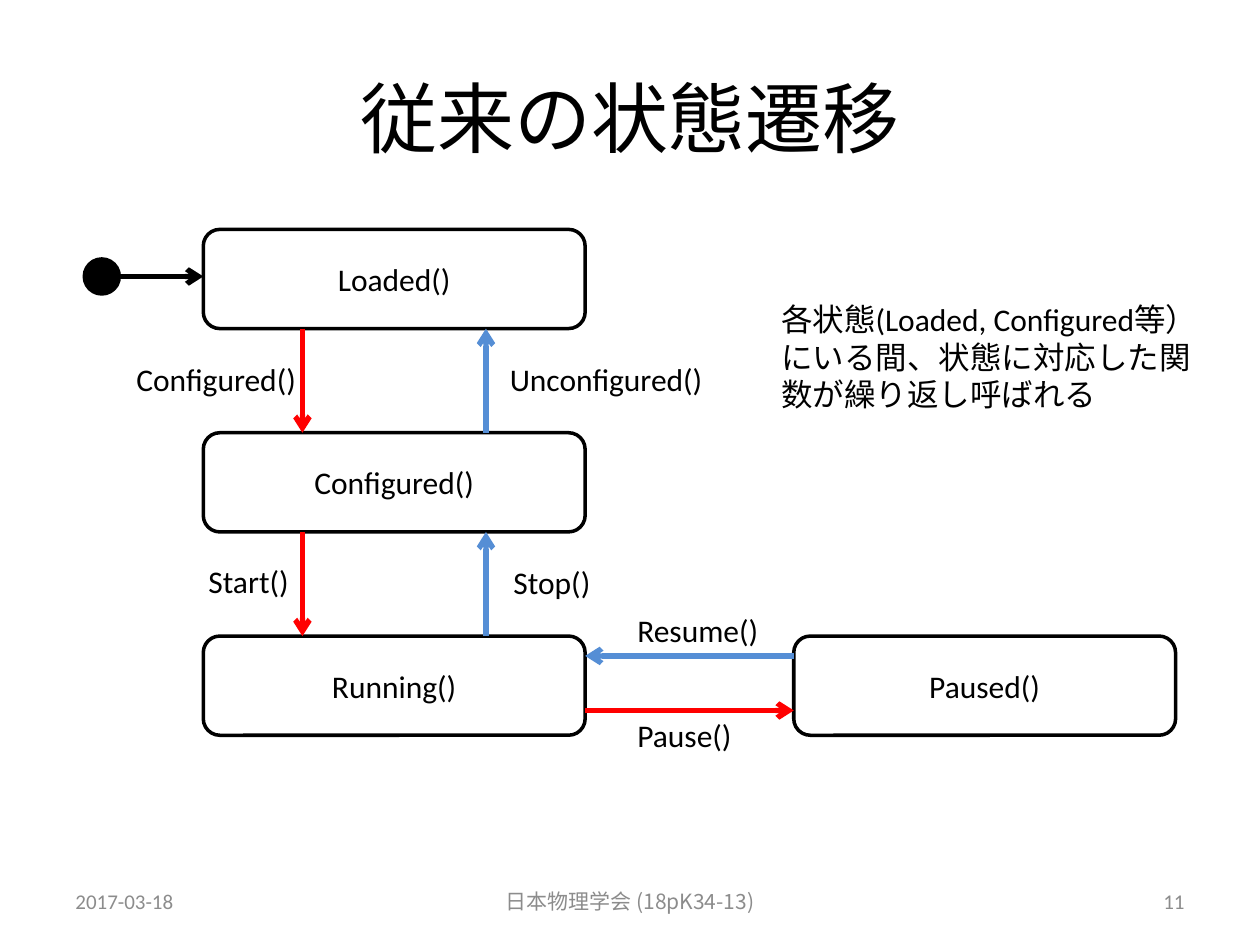
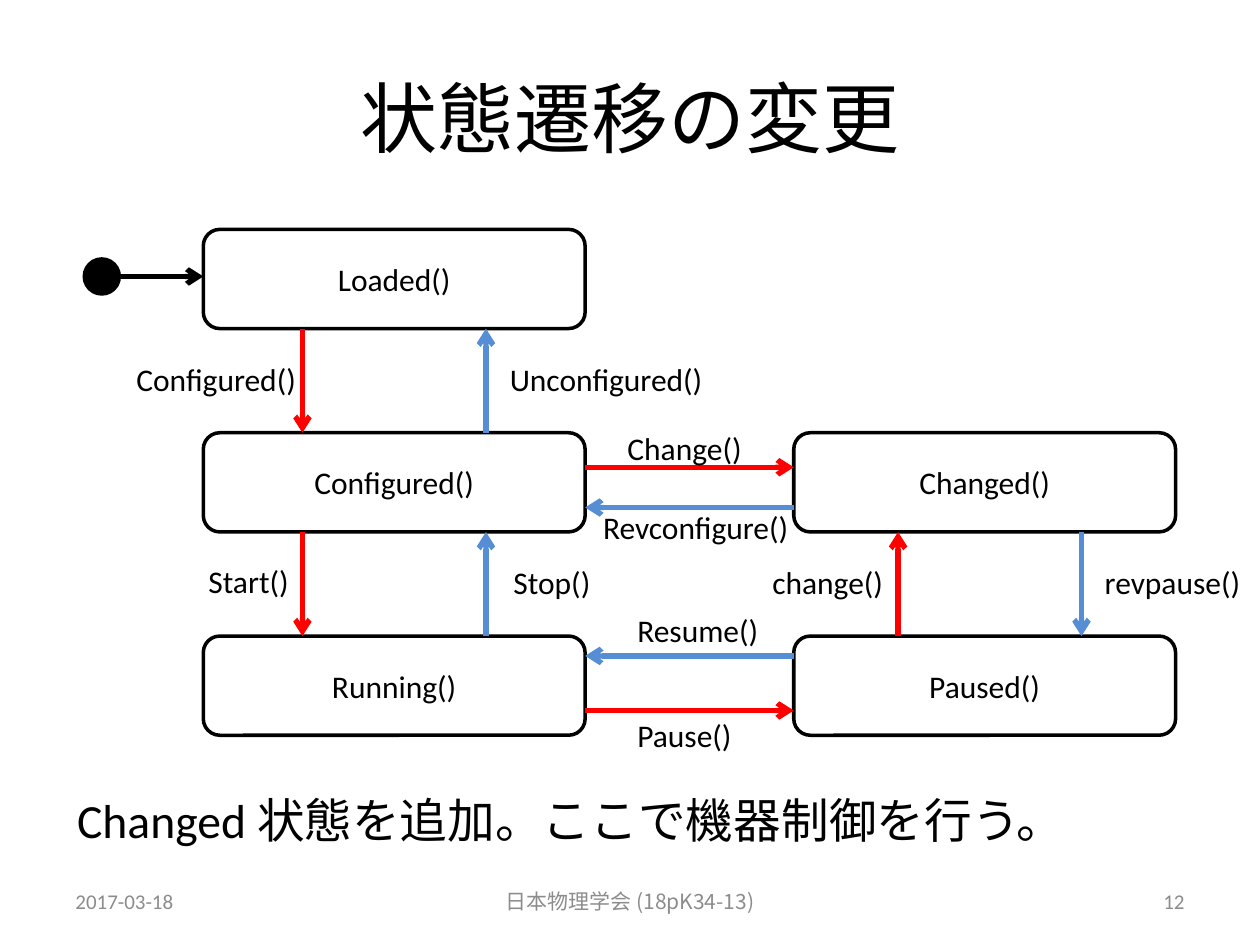
from lxml.etree import SubElement
from pptx import Presentation
from pptx.dml.color import RGBColor
from pptx.enum.shapes import MSO_CONNECTOR, MSO_SHAPE
from pptx.enum.text import MSO_ANCHOR, MSO_AUTO_SIZE, PP_ALIGN
from pptx.oxml.ns import qn
from pptx.util import Pt

COLORS = {"ink": "000000", "red": "FF0000", "blue": "558ED5", "gray": "8C8C8C"}
LATIN, ASIAN = "Calibri", "Noto Sans CJK JP"
LEFT, RIGHT = 116.2, 453.6
WIDE, HIGH = 218.2, 56.7
TOP, PITCH = 131.1, 116.2
DOT = 20


def color(name):
    return RGBColor.from_string(COLORS[name])


def row_top(row):
    return TOP + row * PITCH


def write(frame, text, size=18, font=LATIN, tint="ink",
          align=PP_ALIGN.LEFT, anchor=MSO_ANCHOR.TOP, wrap=True):
    frame.word_wrap = wrap
    frame.vertical_anchor = anchor
    para = frame.paragraphs[0]
    para.alignment = align
    run = para.add_run()
    run.text = text
    run.font.size = Pt(size)
    run.font.name = font
    run.font.color.rgb = color(tint)
    SubElement(run.font._element, qn("a:ea"), typeface=ASIAN)


class Deck:
    """Hold the shared style and the current slide."""

    def __init__(self):
        self.show = Presentation()
        self.show.slide_width, self.show.slide_height = Pt(720), Pt(540)
        self.slide = None

    def start(self, title, number):
        self.slide = self.show.slides.add_slide(self.show.slide_layouts[5])
        head = self.slide.shapes.title
        head.left, head.top, head.width, head.height = Pt(36), Pt(21.6), Pt(648), Pt(90)
        write(head.text_frame, title, size=44, align=PP_ALIGN.CENTER,
              anchor=MSO_ANCHOR.MIDDLE)
        for text, left, width, align, font in (
                ("2017-03-18", 36, 168, PP_ALIGN.LEFT, LATIN),
                ("日本物理学会 (18pK34-13)", 246, 228, PP_ALIGN.CENTER, ASIAN),
                (number, 516, 168, PP_ALIGN.RIGHT, LATIN)):
            self.text(text, left, 500.5, width, size=12, font=font, tint="gray",
                      align=align, anchor=MSO_ANCHOR.MIDDLE)

    def text(self, text, left, top, width, height=28.8, **style):
        box = self.slide.shapes.add_textbox(Pt(left), Pt(top), Pt(width), Pt(height))
        write(box.text_frame, text, **style)
        return box

    def label(self, text, left, top, width):
        box = self.text(text, left, top, width, wrap=False)
        box.text_frame.auto_size = MSO_AUTO_SIZE.SHAPE_TO_FIT_TEXT

    def shape(self, kind, left, top, width, height):
        item = self.slide.shapes.add_shape(kind, Pt(left), Pt(top), Pt(width), Pt(height))
        item.shadow.inherit = False
        item.line.color.rgb = color("ink")
        item.line.width = Pt(2)
        return item

    def state(self, text, left, row):
        box = self.shape(MSO_SHAPE.ROUNDED_RECTANGLE, left, row_top(row), WIDE, HIGH)
        box.fill.background()
        write(box.text_frame, text, align=PP_ALIGN.CENTER, anchor=MSO_ANCHOR.MIDDLE)

    def arrow(self, tint, *ends):
        line = self.slide.shapes.add_connector(MSO_CONNECTOR.STRAIGHT, *map(Pt, ends))
        line.line.color.rgb = color(tint)
        line.line.width = Pt(3)
        SubElement(line.line._get_or_add_ln(), qn("a:tailEnd"), type="arrow")
        SubElement(line._element.spPr, qn("a:effectLst"))

    def down(self, tint, x, row):
        self.arrow(tint, x, row_top(row) + HIGH, x, row_top(row + 1))

    def up(self, tint, x, row):
        self.arrow(tint, x, row_top(row + 1), x, row_top(row) + HIGH)

    def forth(self, tint, y):
        self.arrow(tint, LEFT + WIDE, y, RIGHT, y)

    def back(self, tint, y):
        self.arrow(tint, RIGHT, y, LEFT + WIDE, y)

    def entry(self, left, y):
        dot = self.shape(MSO_SHAPE.OVAL, left, y - DOT / 2, DOT, DOT)
        dot.fill.solid()
        dot.fill.fore_color.rgb = color("ink")
        self.arrow("ink", left + DOT, y, LEFT, y)

    def labels(self, items):
        for item in items:
            self.label(*item)

    def chain(self):
        self.entry(48.2, 158)
        for row, name in enumerate(("Loaded()", "Configured()", "Running()")):
            self.state(name, LEFT, row)
        self.state("Paused()", RIGHT, 2)
        for row in range(2):
            self.down("red", 172.8, row)
            self.up("blue", 277.7, row)
        self.forth("red", 406)
        self.back("blue", 374.8)
        self.labels((("Configured()", 70.8, 202.3, 107.3),
                     ("Start()", 112, 317.8, 61.2),
                     ("Unconfigured()", 284.2, 202.3, 126),
                     ("Stop()", 286.3, 318.2, 59),
                     ("Resume()", 357.1, 345.6, 84.2),
                     ("Pause()", 357.1, 405.4, 69.1)))

    def change(self):
        self.state("Changed()", RIGHT, 1)
        self.forth("red", 267)
        self.back("blue", 290)
        self.up("red", 513.2, 1)
        self.down("blue", 618, 1)
        self.labels((("Change()", 351.4, 241.9, 80.6),
                     ("Revconfigure()", 337.5, 287, 121.7),
                     ("change()", 434.2, 318.2, 78.5),
                     ("revpause()", 624.2, 318.2, 92.9)))


def main():
    deck = Deck()
    deck.start("従来の状態遷移", "11")
    deck.chain()
    deck.text("各状態(Loaded, Configured等）にいる間、状態に対応した関数が繰り返し呼ばれる",
              439.2, 167.8, 264, 72.7)

    deck.start("状態遷移の変更", "12")
    deck.chain()
    deck.change()
    deck.text("Changed 状態を追加。ここで機器制御を行う。", 37, 448.6, 648, 33.1, size=27.2)
    deck.show.save("out.pptx")


if __name__ == "__main__":
    main()
